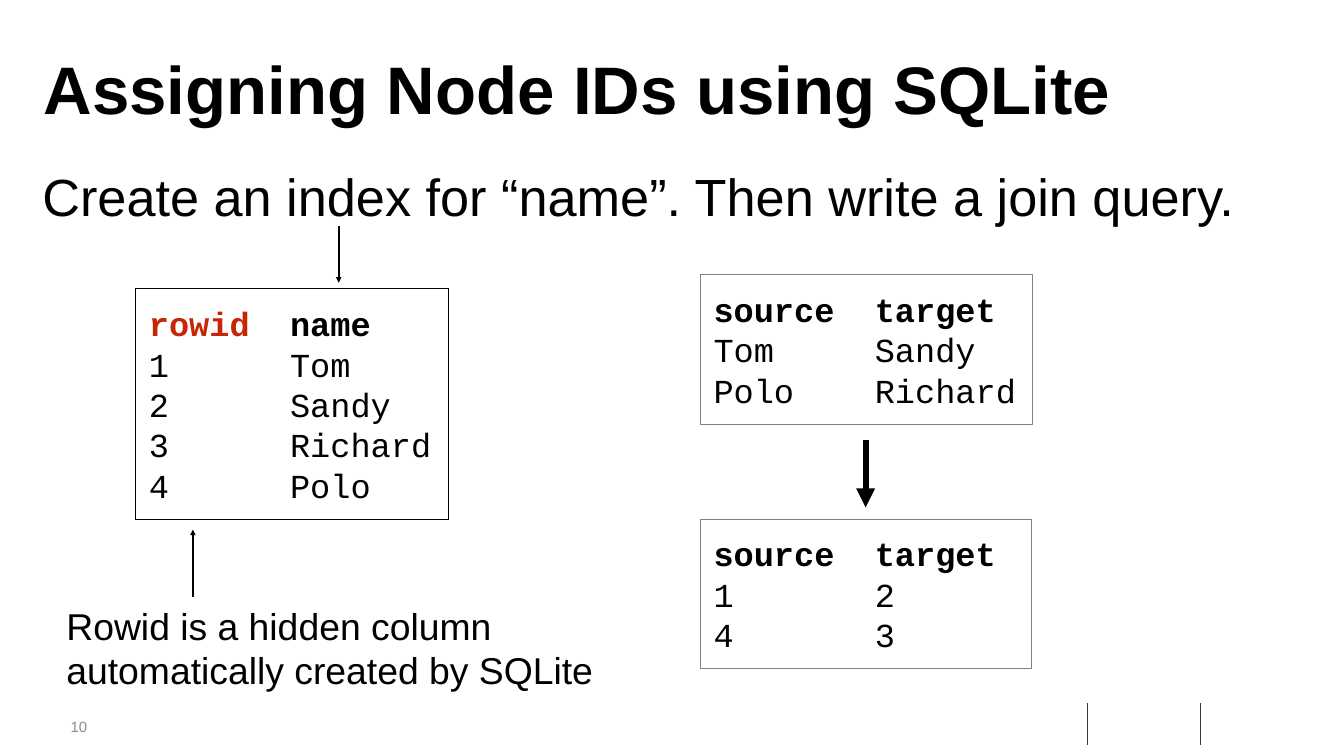
"""Build the slide on assigning node IDs using SQLite."""
from lxml.etree import SubElement
from pptx import Presentation
from pptx.dml.color import RGBColor
from pptx.enum.shapes import MSO_CONNECTOR as Connector, MSO_SHAPE as Shape
from pptx.enum.text import MSO_ANCHOR as Anchor, PP_ALIGN as Align
from pptx.oxml.ns import qn
from pptx.util import Cm, Pt


def color(value):
    return RGBColor.from_string(value)


def write(box, text, size, font="Arial", ink="000000", bold=False, inset=0.2,
          anchor=Anchor.MIDDLE, tab=None, header_ink=None):
    frame = box.text_frame
    frame.word_wrap = True
    frame.vertical_anchor = anchor
    side, end = inset if isinstance(inset, tuple) else (inset, inset)
    frame.margin_left = frame.margin_right = Cm(side)
    frame.margin_top = frame.margin_bottom = Cm(end)
    for row, line in enumerate(text.splitlines()):
        paragraph = frame.paragraphs[0] if row == 0 else frame.add_paragraph()
        paragraph.alignment = Align.LEFT
        if tab:
            stops = SubElement(paragraph._p.get_or_add_pPr(), qn("a:tabLst"))
            SubElement(stops, qn("a:tab"), pos=str(Cm(tab)), algn="l")
        first, separator, rest = line.partition("\t")
        for part, part_ink in ((first, header_ink or ink), (separator + rest, ink)):
            if part:
                run = paragraph.add_run()
                run.text = part
                run.font.name = font
                run.font.size = Pt(size)
                run.font.bold = bold or (tab is not None and row == 0)
                run.font.color.rgb = color(part_ink if row == 0 else ink)


deck = Presentation()
deck.slide_width, deck.slide_height = Cm(50.8), Cm(28.58)
slide = deck.slides.add_slide(deck.slide_layouts[6])
shapes = slide.shapes

labels = [
    ("10", (2.67, 27.13, 1.5, 0.69), dict(size=16, ink="8C8C8C", inset=0)),
    ("Assigning Node IDs using SQLite", (1.4, 1.52, 45.47, 3.33),
     dict(size=72, bold=True, inset=(0.25, 0), anchor=Anchor.BOTTOM)),
    ("Create an index for “name”. Then write a join query.",
     (1.4, 5.97, 47.32, 2.82), dict(size=56)),
    ("Rowid is a hidden column\nautomatically created by SQLite",
     (2.31, 22.56, 20.55, 3.84), dict(size=40)),
]
for text, place, style in labels:
    write(shapes.add_textbox(*map(Cm, place)), text, **style)

character_width = 0.762
listings = [
    ("rowid\tname\n1\tTom\n2\tSandy\n3\tRichard\n4\tPolo",
     (5.13, 10.92, 11.81, 8.71), "000000", 7, "C82506"),
    ("source\ttarget\nTom\tSandy\nPolo\tRichard",
     (26.47, 10.39, 12.57, 5.64), "808080", 8, None),
    ("source\ttarget\n1\t2\n4\t3",
     (26.47, 19.63, 12.52, 5.64), "808080", 8, None),
]
for text, place, border, column, header_ink in listings:
    listing = shapes.add_shape(Shape.RECTANGLE, *map(Cm, place))
    listing.shadow.inherit = False
    listing.fill.background()
    listing.line.color.rgb = color(border)
    listing.line.width = Pt(1)
    write(listing, text, 36, font="Courier New", inset=0.5,
          tab=column * character_width, header_ink=header_ink)

strokes = [
    (41.1, 26.57, 28.17, "383838", 1, False),
    (45.36, 26.57, 28.17, "383838", 1, False),
    (12.8, 8.56, 10.69, "000000", 2, True),
    (32.72, 16.64, 19.18, "000000", 6.75, True),
    (7.29, 22.56, 20.02, "000000", 2, True),
]
for x, start, end, ink, weight, pointed in strokes:
    stroke = shapes.add_connector(Connector.STRAIGHT, Cm(x), Cm(start), Cm(x), Cm(end))
    stroke.line.color.rgb = color(ink)
    stroke.line.width = Pt(weight)
    if pointed:
        SubElement(stroke.line._get_or_add_ln(), qn("a:tailEnd"), type="triangle")
    SubElement(stroke._element.spPr, qn("a:effectLst"))

deck.save("out.pptx")
